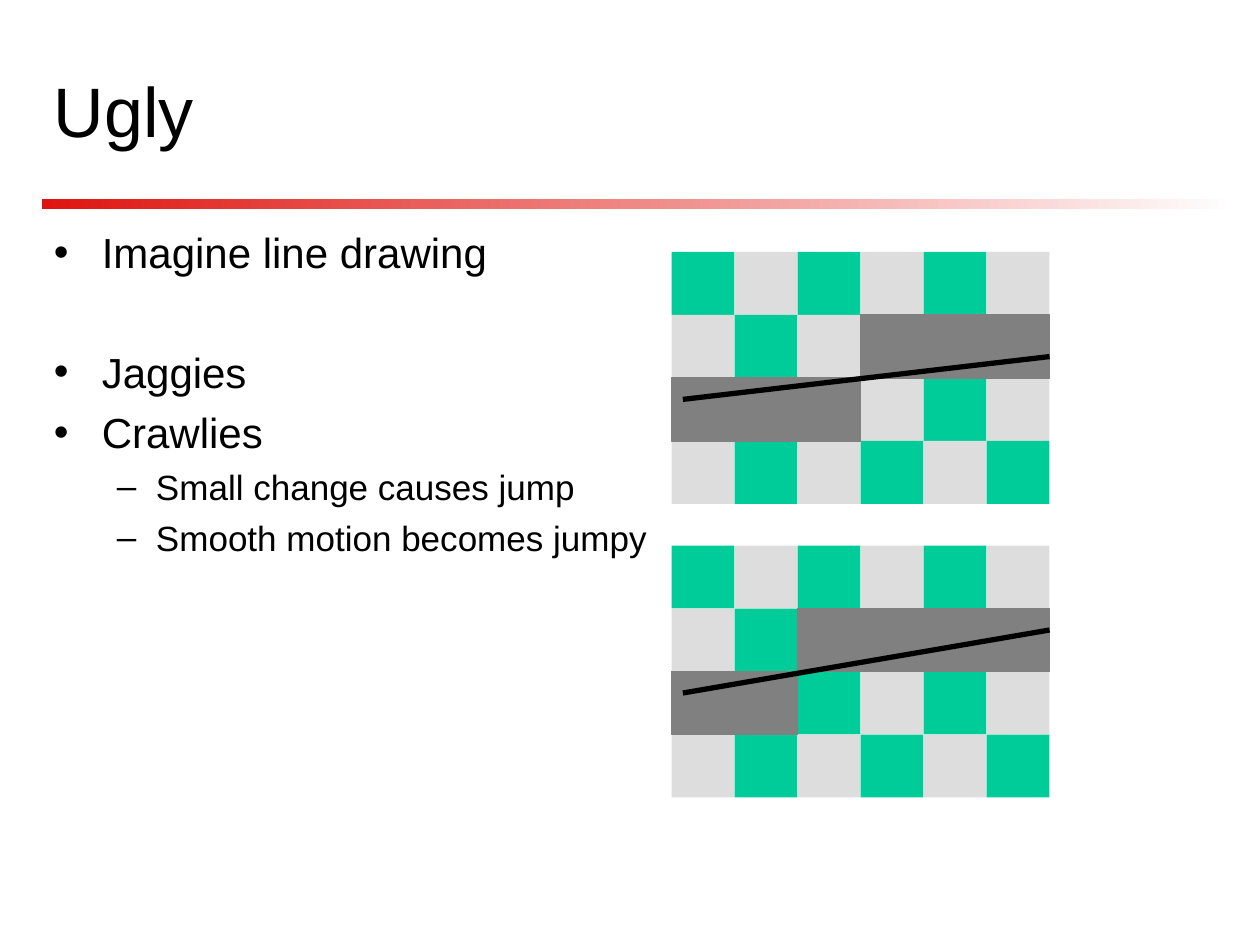
"""Build the slide on jagged lines with two pixel grids."""
from dataclasses import dataclass

from lxml import etree
from pptx import Presentation, util as u
from pptx.dml.color import RGBColor
from pptx.enum import shapes, text
from pptx.oxml.ns import qn

GREEN, LIGHT, DARK, BLACK = "00CC99", "DDDDDD", "808080", "000000"
RED, WHITE = "DF140F", "FFFFFF"
CELL, ROWS, COLS, LEFT = 0.5, 4, 6, 5.33


@dataclass
class Item:
    words: str
    level: int = 0
    before: float = 5.8


@dataclass
class Grid:
    top: float
    step: int
    start_y: float
    end_y: float


@dataclass
class Level:
    bullet: str
    size: int
    margin: float
    indent: float


LEVELS = [Level("•", 24, 0.38, -0.38), Level("–", 20, 0.81, -0.31)]
ITEMS = [
    Item("Imagine line drawing", before=0),
    Item("Jaggies", before=39.5),
    Item("Crawlies"),
    Item("Small change causes jump", 1, 4.9),
    Item("Smooth motion becomes jumpy", 1, 4.9),
]
GRIDS = [Grid(2, 3, 3.17, 2.83), Grid(4.33, 2, 5.5, 5)]


def color(value: str) -> RGBColor:
    return RGBColor.from_string(value)


def add_rect(parent, x: float, y: float, w: float, h: float):
    sp = parent.add_shape(shapes.MSO_SHAPE.RECTANGLE, *map(u.Inches, (x, y, w, h)))
    sp.shadow.inherit = False
    sp.line.fill.background()
    return sp


def add_rule(s) -> None:
    fill = add_rect(s.shapes, 0.33, 1.58, 9.5, 0.08).fill
    fill.gradient()
    fill.gradient_angle = 0
    for stop, value, position in zip(fill.gradient_stops, (RED, WHITE), (0, 1)):
        stop.color.rgb = color(value)
        stop.position = position


def add_frame(s, x: float, y: float, w: float, h: float, anchor):
    tf = s.shapes.add_textbox(*map(u.Inches, (x, y, w, h))).text_frame
    for name, value in {"word_wrap": True, "vertical_anchor": anchor}.items():
        setattr(tf, name, value)
    return tf


def add_run(p, words: str, size: int) -> None:
    r = p.add_run()
    r.text = words
    for name, value in {"name": "Arial", "size": u.Pt(size)}.items():
        setattr(r.font, name, value)
    r.font.color.rgb = color(BLACK)


def add_item(p, item: Item) -> None:
    level = LEVELS[item.level]
    p.level = item.level
    p.space_before = u.Pt(item.before)
    pPr = p._p.get_or_add_pPr()
    pPr.set("marL", str(u.Inches(level.margin)))
    pPr.set("indent", str(u.Inches(level.indent)))
    etree.SubElement(pPr, qn("a:buFont")).set("typeface", "Arial")
    etree.SubElement(pPr, qn("a:buChar")).set("char", level.bullet)
    add_run(p, item.words, level.size)


def is_dark(row: int, col: int, step: int) -> bool:
    return (row == 1 and col >= step) or (row == 2 and col < step)


def add_cell(parent, grid: Grid, row: int, col: int, value: str):
    sp = add_rect(parent, LEFT + col * CELL, grid.top + row * CELL, CELL, CELL)
    sp.fill.solid()
    sp.fill.fore_color.rgb = color(value)
    return sp


def add_grid(s, grid: Grid) -> None:
    board = s.shapes.add_group_shape().shapes
    for row in range(ROWS):
        for col in range(COLS):
            if is_dark(row, col, grid.step):
                sp = add_cell(s.shapes, grid, row, col, DARK)
                sp.line.color.rgb = color(DARK)
                sp.line.width = u.Pt(0.75)
            else:
                add_cell(board, grid, row, col, LIGHT if (row + col) % 2 else GREEN)
    ends = map(u.Inches, (5.42, grid.start_y, 8.33, grid.end_y))
    line = s.shapes.add_connector(shapes.MSO_CONNECTOR.STRAIGHT, *ends)
    line.line.color.rgb = color(BLACK)
    line.line.width = u.Pt(3)
    etree.SubElement(line._element.spPr, qn("a:effectLst"))


def main() -> None:
    prs = Presentation()
    prs.slide_width, prs.slide_height = u.Inches(10), u.Inches(7.5)
    s = prs.slides.add_slide(prs.slide_layouts[6])
    add_rule(s)
    tf = add_frame(s, 0.33, 0.33, 8.33, 1.08, text.MSO_ANCHOR.MIDDLE)
    add_run(tf.paragraphs[0], "Ugly", 40)
    tf = add_frame(s, 0.33, 1.75, 5, 5.58, text.MSO_ANCHOR.TOP)
    for i, item in enumerate(ITEMS):
        add_item(tf.add_paragraph() if i else tf.paragraphs[0], item)
    for grid in GRIDS:
        add_grid(s, grid)
    prs.save("out.pptx")


if __name__ == "__main__":
    main()
